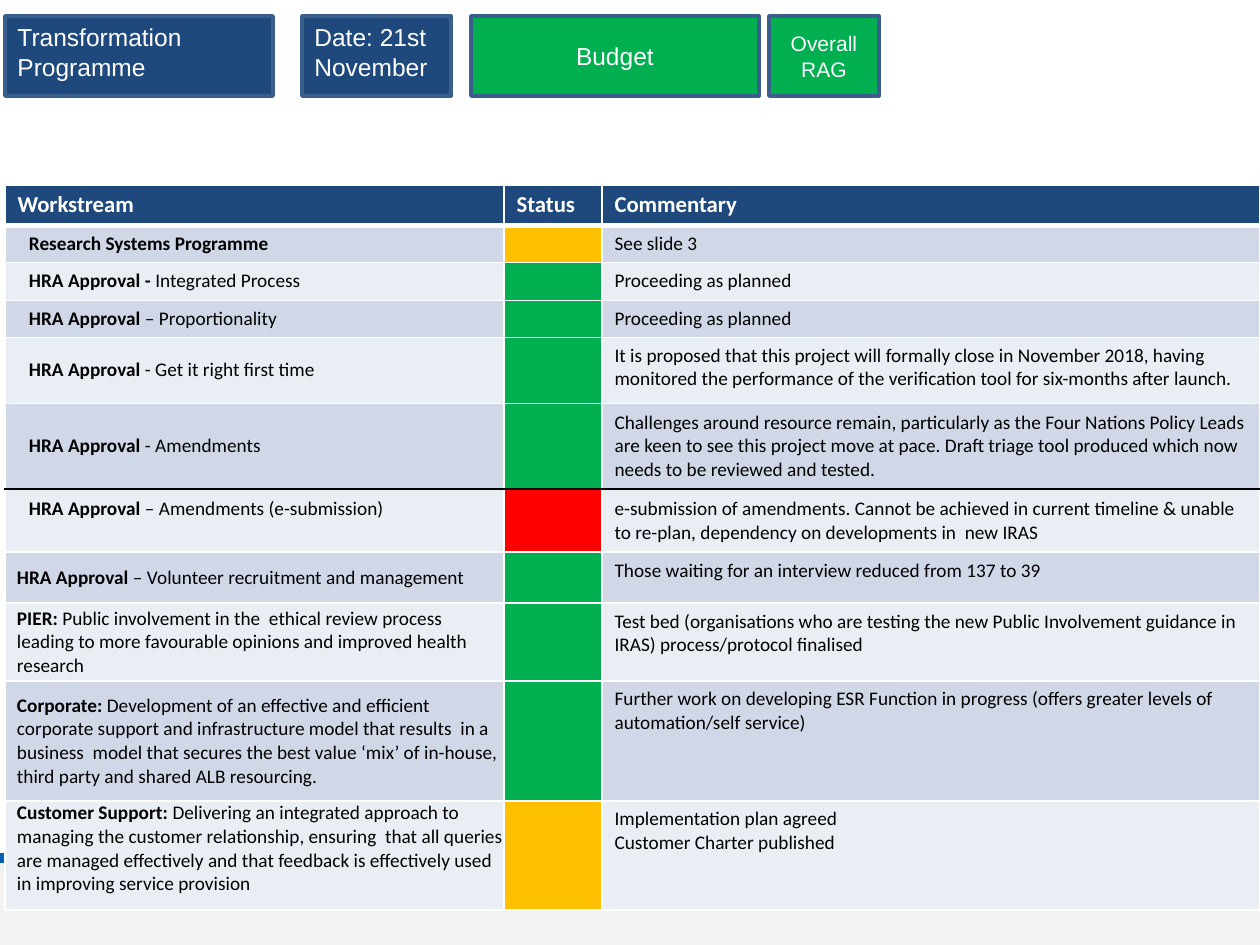
"""Build the transformation programme status slide."""
from lxml import etree
from pptx import Presentation
from pptx import util as u
from pptx.dml.color import RGBColor
from pptx.enum import shapes, text
from pptx.oxml.ns import qn

PX = u.Inches(1) / 126
C = {"navy": "1F497D", "edge": "3A5F8C", "green": "00B050", "amber": "FFC000",
     "red": "FF0000", "white": "FFFFFF", "black": "000000", "dark_band": "D0D8E8",
     "light_band": "E9EDF4", "footer": "F2F2F2", "rule": "005EB8"}


def px(*values):
    return [round(v * PX) for v in values]


def put(p, words, font="Calibri", size=11, color="black", bold=False):
    r = p.add_run()
    r.text = words
    r.font.name, r.font.size, r.font.bold = font, u.Pt(size), bold
    r.font.color.rgb = RGBColor.from_string(C[color])


prs = Presentation()
prs.slide_width, prs.slide_height = px(1260, 945)
s = prs.slides.add_slide(prs.slide_layouts[6])

sp = s.shapes.add_shape(shapes.MSO_SHAPE.RECTANGLE, *px(0, 858, 1260, 87))
sp.shadow.inherit = False
sp.fill.solid()
sp.fill.fore_color.rgb = RGBColor.from_string(C["footer"])
sp.line.fill.background()

ln = s.shapes.add_connector(shapes.MSO_CONNECTOR.STRAIGHT, *px(0, 858, 1260, 858))
ln.line.color.rgb = RGBColor.from_string(C["rule"])
ln.line.width = u.Pt(6)
etree.SubElement(ln._element.spPr, qn("a:effectLst"))

LEFT, CENTER = text.PP_ALIGN.LEFT, text.PP_ALIGN.CENTER
TOP, MIDDLE = text.MSO_ANCHOR.TOP, text.MSO_ANCHOR.MIDDLE
boxes = [
    (5, 268, "navy", 14, LEFT, TOP, ["Transformation Programme"]),
    (302, 149, "navy", 14, LEFT, TOP, ["Date: 21st November"]),
    (471, 288, "green", 14, CENTER, MIDDLE, ["Budget"]),
    (769, 110, "green", 12, CENTER, MIDDLE, ["Overall", "RAG"]),
]
for left, width, fill, size, align, anchor, lines in boxes:
    sp = s.shapes.add_shape(shapes.MSO_SHAPE.RECTANGLE, *px(left, 16, width, 80))
    sp.shadow.inherit = False
    sp.fill.solid()
    sp.fill.fore_color.rgb = RGBColor.from_string(C[fill])
    sp.line.color.rgb = RGBColor.from_string(C["edge"])
    sp.line.width = u.Pt(2)
    tf = sp.text_frame
    tf.word_wrap, tf.vertical_anchor = True, anchor
    for i, line in enumerate(lines):
        p = tf.paragraphs[0] if i == 0 else tf.add_paragraph()
        p.alignment = align
        put(p, line, font="Arial", size=size, color="white")

rows = [
    (40, 12, "Workstream", "", "navy", ["Commentary"]),
    (37, 24, "Research Systems Programme", "", "amber", ["See slide 3"]),
    (38, 24, "HRA Approval - ", "Integrated Process", "green", ["Proceeding as planned"]),
    (37, 24, "HRA Approval ", "– Proportionality", "green", ["Proceeding as planned"]),
    (66, 24, "HRA Approval ", "- Get it right first time", "green",
     ["It is proposed that this project will formally close in November 2018, having "
      "monitored the performance of the verification tool for six-months after launch."]),
    (86, 24, "HRA Approval ", "- Amendments", "green",
     ["Challenges around resource remain, particularly as the Four Nations Policy Leads "
      "are keen to see this project move at pace. Draft triage tool produced which now "
      "needs to be reviewed and tested."]),
    (63, 24, "HRA Approval ", "– Amendments (e-submission)", "red",
     ["e-submission of amendments. Cannot be achieved in current timeline & unable "
      "to re-plan, dependency on developments in  new IRAS"]),
    (51, 12, "HRA Approval", " – Volunteer recruitment and management", "green",
     ["Those waiting for an interview reduced from 137 to 39"]),
    (78, 12, "PIER: ", "Public involvement in the  ethical review process leading to more "
     "favourable opinions and improved health research", "green",
     ["Test bed (organisations who are testing the new Public Involvement guidance in "
      "IRAS) process/protocol finalised"]),
    (120, 12, "Corporate: ", "Development of an effective and efficient corporate support and "
     "infrastructure model that results  in a business  model that secures the best value "
     "‘mix’ of in-house, third party and shared ALB resourcing.", "green",
     ["Further work on developing ESR Function in progress (offers greater levels of "
      "automation/self service)"]),
    (109, 12, "Customer Support: ", "Delivering an integrated approach to managing the customer "
     "relationship, ensuring  that all queries are managed effectively and that feedback is "
     "effectively used in improving service provision", "amber",
     ["Implementation plan agreed", "Customer Charter published"]),
]
widths = [499, 98, 658]
heights = [row[0] for row in rows]
rules = {1: ("white", 3), 6: ("black", 1)}
tbl = s.shapes.add_table(len(rows), len(widths),
                         *px(5, 185, sum(widths), sum(heights))).table
for col, width in zip(tbl.columns, px(*widths)):
    col.width = width
for row, height in zip(tbl.rows, px(*heights)):
    row.height = height

for i, (height, indent, lead, rest, status, comments) in enumerate(rows):
    head = i == 0
    band = "navy" if head else "dark_band" if i % 2 else "light_band"
    style = {"size": 13, "color": "white", "bold": True} if head else {}
    work, state, note = cells = [tbl.cell(i, j) for j in range(len(widths))]
    for cell, fill in zip(cells, (band, status, band)):
        tcPr = cell._tc.get_or_add_tcPr()
        edges = {"L": ("white", 1), "R": ("white", 1),
                 "T": rules.get(i, ("white", 1)), "B": rules.get(i + 1, ("white", 1))}
        for side, (color, weight) in edges.items():
            border = etree.SubElement(tcPr, qn(f"a:ln{side}"), w=str(u.Pt(weight)))
            solid = etree.SubElement(border, qn("a:solidFill"))
            etree.SubElement(solid, qn("a:srgbClr"), val=C[color])
        cell.fill.solid()
        cell.fill.fore_color.rgb = RGBColor.from_string(C[fill])

    p = work.text_frame.paragraphs[0]
    put(p, lead, **{**style, "bold": True})
    if rest:
        put(p, rest)
    if not head:
        work.margin_left, work.margin_right, work.margin_top = px(indent, 0, 0)
        work.margin_bottom = px(24 if status == "red" else 0)[0]
        work.vertical_anchor = TOP if i == len(rows) - 1 else MIDDLE

    p = state.text_frame.paragraphs[0]
    if head:
        put(p, "Status", **style)
    else:
        etree.SubElement(p._p, qn("a:endParaRPr"), sz="1100")

    note.vertical_anchor = MIDDLE if i in (5, 6) else TOP
    for k, line in enumerate(comments):
        tf = note.text_frame
        put(tf.paragraphs[0] if k == 0 else tf.add_paragraph(), line, **style)

prs.save("out.pptx")
